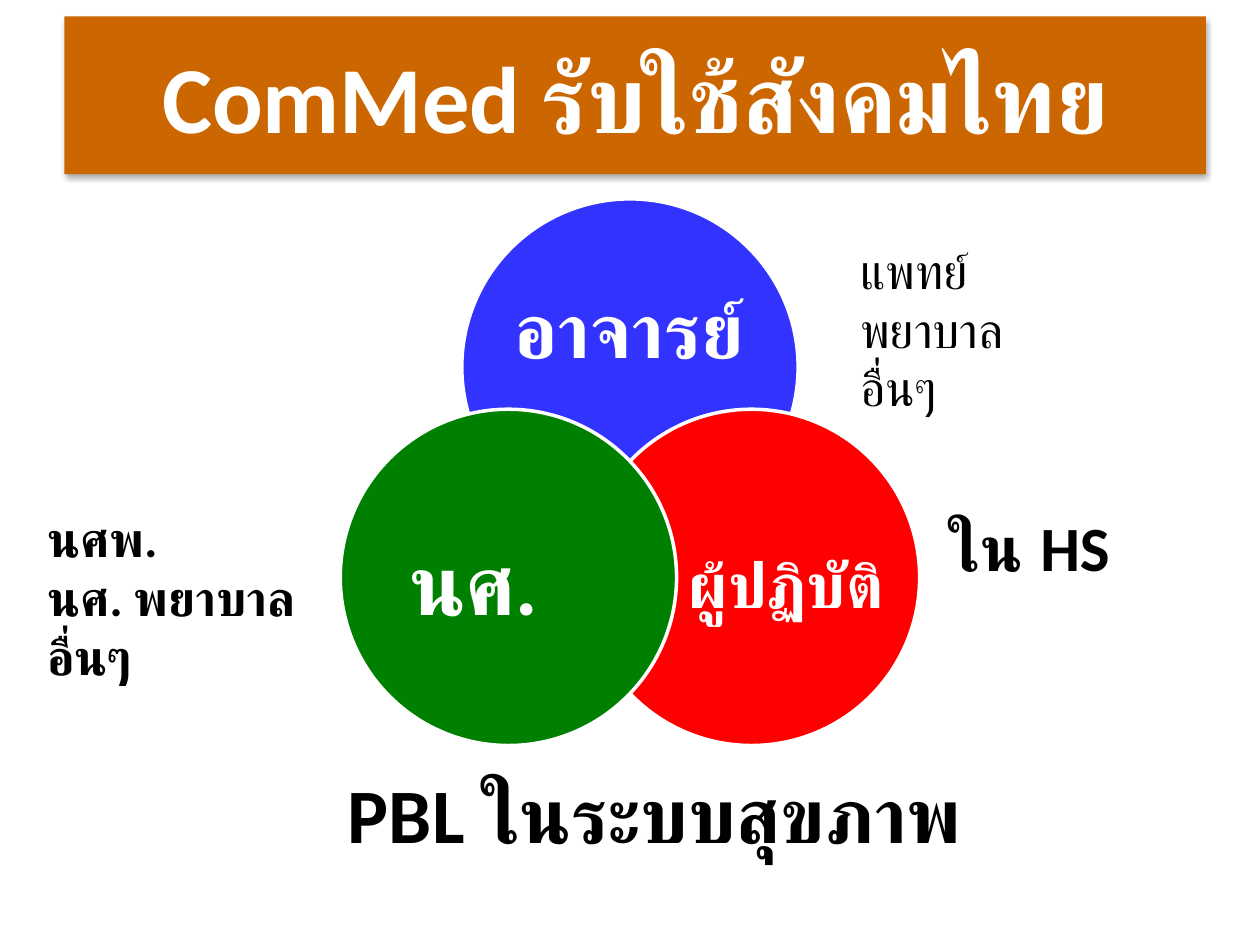
from dataclasses import dataclass

from lxml.etree import SubElement
from pptx import Presentation
from pptx.dml.color import RGBColor
from pptx.enum.shapes import MSO_SHAPE as Preset
from pptx.enum.text import MSO_ANCHOR as Anchor, MSO_AUTO_SIZE as AutoSize, PP_ALIGN as Align
from pptx.oxml.ns import qn
from pptx.util import Cm, Pt


@dataclass(frozen=True)
class Theme:
    font: str = "Calibri"
    banner: str = "CC6600"
    teachers: str = "3333FF"
    practitioners: str = "FF0000"
    students: str = "008000"
    light: str = "FFFFFF"
    dark: str = "000000"
    title: int = 54
    large: int = 48
    heading: int = 44
    medium: int = 36
    note: int = 28


THEME = Theme()


def place(shape, box):
    shape.left, shape.top, shape.width, shape.height = (Cm(value) for value in box)


def fill_solid(shape, color):
    shape.fill.solid()
    shape.fill.fore_color.rgb = RGBColor.from_string(color)


def write_lines(frame, lines, size, color, bold=True, align=Align.LEFT):
    for index, line in enumerate(lines):
        paragraph = frame.paragraphs[0] if index == 0 else frame.add_paragraph()
        paragraph.alignment = align
        run = paragraph.add_run()
        run.text = line
        run.font.name = THEME.font
        run.font.size = Pt(size)
        run.font.bold = bold
        run.font.color.rgb = RGBColor.from_string(color)


def add_soft_shadow(shape):
    shape.shadow.inherit = False
    effects = shape._element.spPr.find(qn("a:effectLst"))
    shadow = SubElement(effects, qn("a:outerShdw"), blurRad=str(Pt(3.1)),
                        dist=str(Pt(1.8)), dir="5400000", rotWithShape="0")
    color = SubElement(shadow, qn("a:srgbClr"), val=THEME.dark)
    SubElement(color, qn("a:alpha"), val="35000")


def build_title(slide, box):
    title = slide.shapes.title
    place(title, box)
    fill_solid(title, THEME.banner)
    add_soft_shadow(title)
    frame = title.text_frame
    frame.auto_size = AutoSize.NONE
    frame.vertical_anchor = Anchor.MIDDLE
    write_lines(frame, ["ComMed รับใช้สังคมไทย"], THEME.title, THEME.light, align=Align.CENTER)


def add_circle(group, box, color):
    circle = group.shapes.add_shape(Preset.OVAL, *(Cm(value) for value in box))
    circle.shadow.inherit = False
    fill_solid(circle, color)
    circle.line.color.rgb = RGBColor.from_string(THEME.light)
    circle.line.width = Pt(2)


def add_circle_label(group, box, text, size):
    label = group.shapes.add_textbox(*(Cm(value) for value in box))
    frame = label.text_frame
    frame.word_wrap = True
    frame.vertical_anchor = Anchor.MIDDLE
    frame.margin_left = frame.margin_top = frame.margin_right = frame.margin_bottom = 0
    write_lines(frame, [text], size, THEME.light, align=Align.CENTER)
    frame.paragraphs[0].line_spacing = 0.9


def build_venn(slide, box, diameter):
    """Three overlapping circles: one centred on top, two in the lower corners."""
    left, top, width, height = box
    right_x, bottom_y = width - diameter, height - diameter
    # Circle offset, colour, text, size, label box relative to the circle
    circles = [
        (right_x / 2, 0, THEME.teachers, "อาจารย์", THEME.heading, (0.89, 1.19, 4.98, 3.05)),
        (right_x, bottom_y, THEME.practitioners, "ผู้ปฏิบัติ", THEME.medium,
         (2.06, 1.75, 4.06, 3.73)),
        (0, bottom_y, THEME.students, "นศ.", THEME.large, (0.66, 1.75, 4.06, 3.73)),
    ]
    group = slide.shapes.add_group_shape()
    for dx, dy, color, text, size, (label_x, label_y, label_w, label_h) in circles:
        x, y = left + dx, top + dy
        add_circle(group, (x, y, diameter, diameter), color)
        add_circle_label(group, (x + label_x, y + label_y, label_w, label_h), text, size)


def build_note(slide, box, lines, size, bold=True, align=Align.LEFT, wrap=True):
    note = slide.shapes.add_textbox(*(Cm(value) for value in box))
    frame = note.text_frame
    frame.word_wrap = wrap
    frame.auto_size = AutoSize.SHAPE_TO_FIT_TEXT
    write_lines(frame, lines, size, THEME.dark, bold, align)


def main():
    presentation = Presentation()
    presentation.slide_width, presentation.slide_height = Cm(25.4), Cm(19.05)
    slide = presentation.slides.add_slide(presentation.slide_layouts[5])
    build_title(slide, (1.3, 0.33, 23.01, 3.18))
    build_venn(slide, (6.86, 4.01, 11.68, 11.02), diameter=6.78)
    build_note(slide, (5.31, 15.32, 16.21, 2.13), ["PBL ในระบบสุขภาพ "],
               THEME.heading, align=Align.CENTER)
    build_note(slide, (0.71, 10.13, 5.99, 3.84), ["นศพ.", "นศ. พยาบาล", "อื่นๆ"], THEME.note)
    build_note(slide, (18.9, 10.13, 5.79, 1.8), ["ใน HS"], THEME.medium)
    build_note(slide, (17.09, 4.72, 4.04, 3.84), ["แพทย์", "พยาบาล", "อื่นๆ"],
               THEME.note, bold=False, wrap=False)
    presentation.save("out.pptx")


if __name__ == "__main__":
    main()
